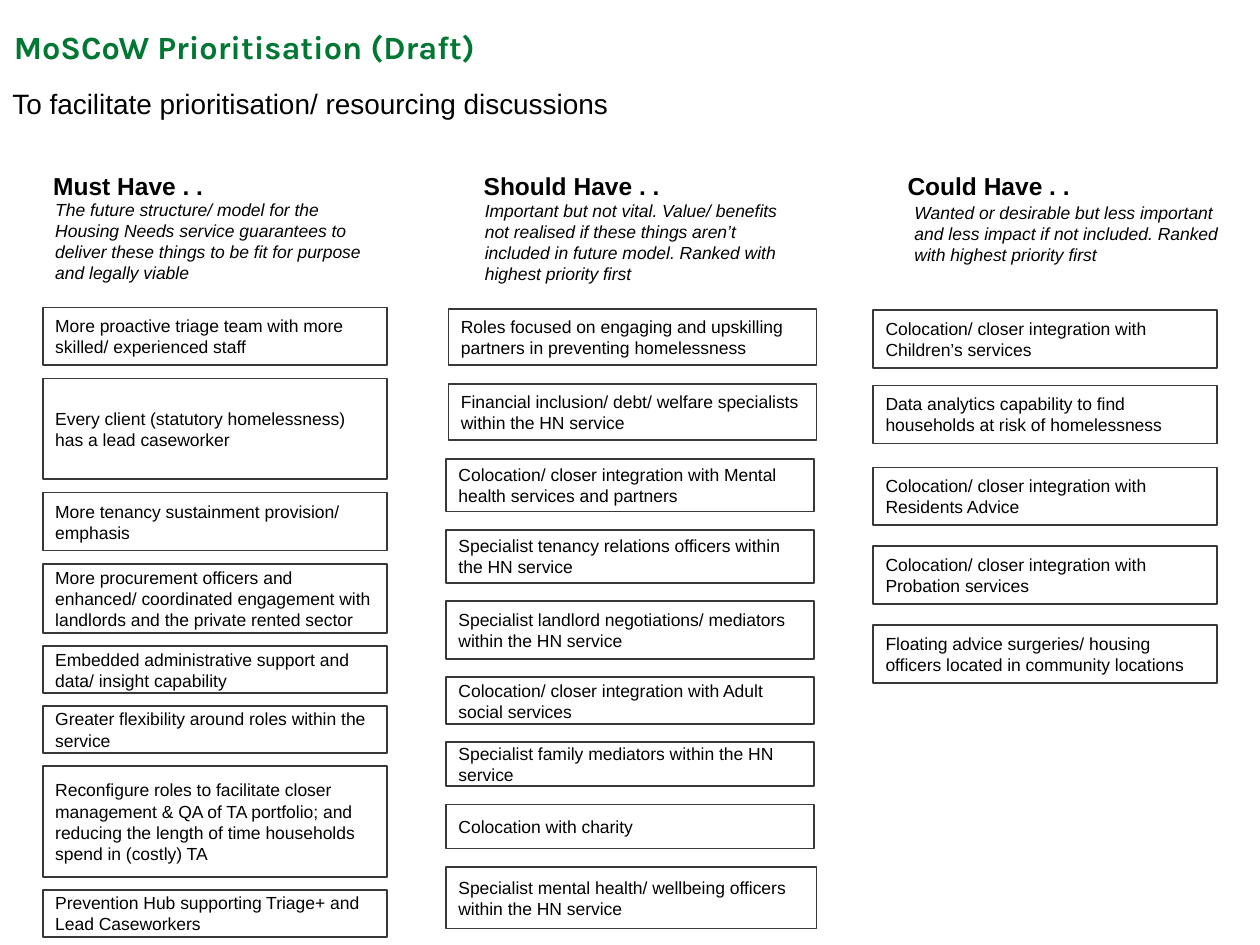
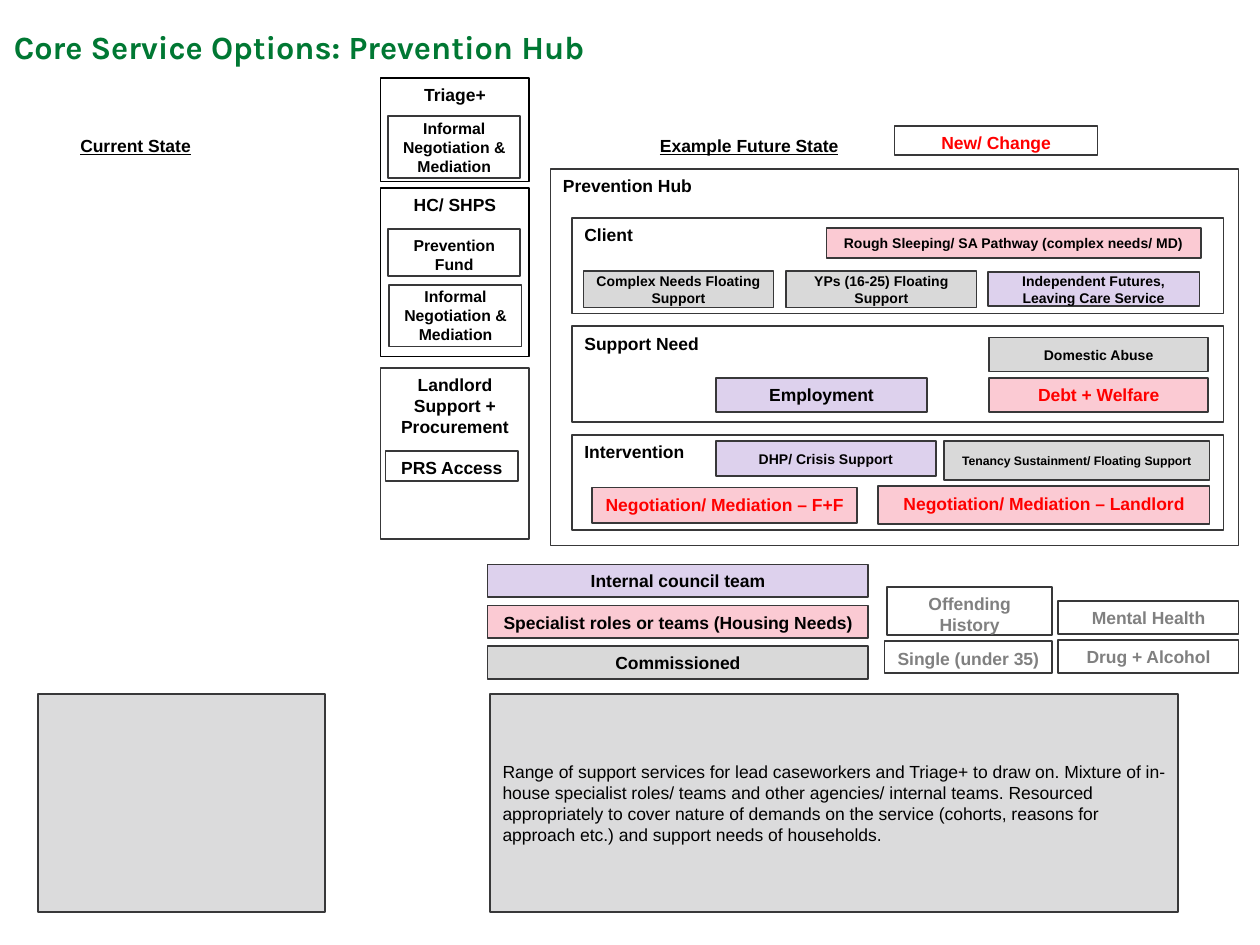
from pptx import Presentation
from pptx.dml.color import RGBColor
from pptx.enum.shapes import MSO_SHAPE as Shape
from pptx.enum.text import MSO_ANCHOR as Anchor, MSO_AUTO_SIZE as AutoSize, PP_ALIGN as Align
from pptx.util import Inches, Pt

BLACK, WHITE, RED, MUTED = "000000", "FFFFFF", "FF0000", "808080"
OUTLINE, TITLE_GREEN, NOTE_GREY = "383839", "007833", "DBDBDC"
COUNCIL, SPECIALIST, COMMISSIONED = "DDD1ED", "FBCAD3", "D9D9D9"

# ---- Slide 1: one entry per priority; boxes are (height, text, exceptions to the column rule)
SUBTITLE = "To facilitate prioritisation/ resourcing discussions"
PRIORITIES = [
    dict(
        heading=("Must Have . . ", 0.18),
        note=("The future structure/ model for the Housing Needs service guarantees to deliver "
              "these things to be fit for purpose and legally viable", 0.34, 1.61),
        left=0.34, top=2.44, width=2.73, gap=0.105,
        boxes=[
            (0.46, "More proactive triage team with more skilled/ experienced staff", {}),
            (0.8, "Every client (statutory homelessness) has a lead caseworker", {}),
            (0.46, "More tenancy sustainment provision/ emphasis", {}),
            (0.55, "More procurement officers and enhanced/ coordinated engagement with "
                   "landlords and the private rented sector", {}),
            (0.37, "Embedded administrative support and data/ insight capability", {}),
            (0.37, "Greater flexibility around roles within the service", {}),
            (0.88, "Reconfigure roles to facilitate closer management & QA of TA portfolio; and "
                   "reducing the length of time households spend in (costly) TA", {}),
            (0.37, "Prevention Hub supporting Triage+ and Lead Caseworkers", {}),
        ],
    ),
    dict(
        heading=("Should Have . . ", 3.7),
        note=("Important but not vital. Value/ benefits not realised if these things aren’t "
              "included in future model. Ranked with highest priority first", 3.75, 1.62),
        left=3.54, top=2.45, width=2.92, gap=0.145,
        boxes=[
            (0.45, "Roles focused on engaging and upskilling partners in preventing homelessness",
             dict(left=3.56)),
            (0.45, "Financial inclusion/ debt/ welfare specialists within the HN service",
             dict(left=3.56)),
            (0.42, "Colocation/ closer integration with Mental health services and partners", {}),
            (0.42, "Specialist tenancy relations officers within the HN service", {}),
            (0.46, "Specialist landlord negotiations/ mediators within the HN service", {}),
            (0.37, "Colocation/ closer integration with Adult social services", {}),
            (0.35, "Specialist family mediators within the HN service", {}),
            (0.35, "Colocation with charity", {}),
            (0.49, "Specialist mental health/ wellbeing officers within the HN service",
             dict(width=2.94)),
        ],
    ),
    dict(
        heading=("Could Have . . ", 7.01),
        note=("Wanted or desirable but less important and less impact if not included. Ranked "
              "with highest priority first", 7.16, 1.55),
        left=6.93, top=2.46, width=2.73, gap=0.165,
        boxes=[
            (0.46, "Colocation/ closer integration with Children’s services", {}),
            (0.46, "Data analytics capability to find households at risk of homelessness",
             dict(top=3.06)),
            (0.46, "Colocation/ closer integration with Residents Advice", dict(top=3.71)),
            (0.46, "Colocation/ closer integration with Probation services", {}),
            (0.46, "Floating advice surgeries/ housing officers located in community locations", {}),
        ],
    ),
]

# ---- Slide 2: places are (left, top, width, height)
STATES = [("Current State", 0.13), ("Example Future State", 5)]
HUB = ("Prevention Hub", (4.37, 1.34, 5.46, 2.99))
HUB_PANELS = ["Client", "Support Need", "Intervention"]
TEAMS = [  # text, top, height, format
    ("Triage+", 0.62, 0.82, dict(fill=None, line=BLACK)),
    ("HC/ SHPS", 1.49, 1.34, dict(fill=None, line=BLACK)),
    ("Landlord Support + Procurement", 2.92, 1.36, {}),
]
LEGEND = [
    ("Internal council team", COUNCIL, Anchor.MIDDLE),
    ("Specialist roles or teams (Housing Needs)", SPECIALIST, Anchor.TOP),
    ("Commissioned", COMMISSIONED, Anchor.MIDDLE),
]
MID = dict(anchor=Anchor.MIDDLE)
NEW = dict(color=RED)
SMALL = dict(size=8)
SERVICES = [  # text, place, fill, format
    ("Rough Sleeping/ SA Pathway (complex needs/ MD)", (6.56, 1.81, 2.97, 0.24), SPECIALIST, SMALL),
    ("Complex Needs Floating Support", (4.63, 2.15, 1.51, 0.29), COMMISSIONED, SMALL | MID),
    ("YPs (16-25) Floating Support", (6.24, 2.15, 1.51, 0.29), COMMISSIONED, SMALL | MID),
    ("Independent Futures, Leaving Care Service", (7.84, 2.16, 1.68, 0.27), COUNCIL, SMALL | MID),
    ("Domestic Abuse", (7.85, 2.68, 1.74, 0.27), COMMISSIONED, SMALL | MID),
    ("Employment", (5.68, 3, 1.68, 0.27), COUNCIL, MID),
    ("Debt + Welfare", (7.85, 3, 1.74, 0.27), SPECIALIST, NEW),
    ("DHP/ Crisis Support", (5.68, 3.5, 1.75, 0.28), COUNCIL, SMALL | MID),
    ("Tenancy Sustainment/ Floating Support", (7.49, 3.5, 2.11, 0.31), COMMISSIONED,
     dict(size=7) | MID),
    ("Negotiation/ Mediation – F+F", (4.7, 3.87, 2.1, 0.28), SPECIALIST, NEW),
    ("Negotiation/ Mediation – Landlord", (6.97, 3.86, 2.63, 0.3), SPECIALIST, NEW),
    ("New/ Change", (7.1, 1, 1.61, 0.23), WHITE, NEW),
    ("Informal Negotiation & Mediation", (3.08, 0.92, 1.05, 0.49), WHITE, dict(size=9) | MID),
    ("Prevention Fund", (3.08, 1.82, 1.05, 0.37), WHITE, dict(size=9)),
    ("Informal Negotiation & Mediation", (3.09, 2.26, 1.05, 0.49), WHITE, dict(size=9) | MID),
    ("PRS Access", (3.06, 3.58, 1.05, 0.24), WHITE, {}),
]
UNPLACED_NEEDS = [
    ("Offending History", (7.04, 4.66, 1.31, 0.38)),
    ("Mental Health", (8.4, 4.77, 1.43, 0.26)),
    ("Single (under 35)", (7.02, 5.09, 1.33, 0.25)),
    ("Drug + Alcohol", (8.4, 5.08, 1.43, 0.26)),
]
SUMMARIES = [
    ("", (0.3, 5.51, 2.28, 1.73)),
    ("Range of support services for lead caseworkers and Triage+ to draw on. Mixture of in-house "
     "specialist roles/ teams and other agencies/ internal teams. Resourced appropriately to cover "
     "nature of demands on the service (cohorts, reasons for approach etc.) and support needs of "
     "households.", (3.89, 5.51, 5.46, 1.73)),
]


def rgb(code):
    return RGBColor.from_string(code)


def write(box, text, size=10, color=BLACK, font="Arial", bold=False, italic=False,
          underline=False, align=Align.LEFT, anchor=Anchor.TOP, spacing=None):
    frame = box.text_frame
    frame.word_wrap = True
    frame.vertical_anchor = anchor
    if not text:
        return
    para = frame.paragraphs[0]
    para.alignment = align
    para.line_spacing = spacing
    span = para.add_run()
    span.text = text
    span.font.name, span.font.size = font, Pt(size)
    span.font.bold, span.font.italic, span.font.underline = bold, italic, underline
    span.font.color.rgb = rgb(color)


def add_label(page, text, place, **style):
    box = page.shapes.add_textbox(*map(Inches, place))
    write(box, text, **style)
    return box


def add_box(page, text, place, fill=WHITE, line=OUTLINE, **style):
    box = page.shapes.add_shape(Shape.RECTANGLE, *map(Inches, place))
    box.shadow.inherit = False
    if fill:
        box.fill.solid()
        box.fill.fore_color.rgb = rgb(fill)
    else:
        box.fill.background()
    box.line.color.rgb = rgb(line)
    box.line.width = Pt(1)
    write(box, text, **style)


def add_page(deck, title):
    page = deck.slides.add_slide(deck.slide_layouts[6])
    box = add_label(page, title, (0.11, 0.24, 7.05, 0.3), size=18.5, color=TITLE_GREEN,
                    font="Karla", bold=True, spacing=0.95)
    frame = box.text_frame
    frame.margin_left = frame.margin_right = frame.margin_top = frame.margin_bottom = 0
    frame.auto_size = AutoSize.SHAPE_TO_FIT_TEXT
    return page


def build_priorities(deck):
    page = add_page(deck, "MoSCoW Prioritisation (Draft)")
    add_label(page, SUBTITLE, (0, 0.64, 9.6, 0.37), size=16)
    for column in PRIORITIES:
        heading, heading_left = column["heading"]
        add_label(page, heading, (heading_left, 1.29, 1.73, 0.36), size=14, bold=True,
                  align=Align.CENTER, **MID)
        note, note_left, note_top = column["note"]
        add_label(page, note, (note_left, note_top, 2.73, 0.6), italic=True, **MID)
        top = column["top"]
        for height, text, exceptions in column["boxes"]:
            top = exceptions.get("top", top)
            left = exceptions.get("left", column["left"])
            width = exceptions.get("width", column["width"])
            add_box(page, text, (left, top, width, height), **MID)
            top += height + column["gap"]


def build_prevention_hub(deck):
    page = add_page(deck, "Core Service Options: Prevention Hub")
    centred = dict(bold=True, align=Align.CENTER)
    for text, left in STATES:
        add_label(page, text, (left, 1.02, 1.89, 0.58), underline=True, **centred)
    add_box(page, *HUB, bold=True)
    for row, text in enumerate(HUB_PANELS):
        add_box(page, text, (4.54, 1.73 + 0.86 * row, 5.17, 0.76), bold=True)
    for text, top, height, style in TEAMS:
        add_box(page, text, (3.02, top, 1.18, height), **centred, **style)
    for text, place, fill, style in SERVICES:
        add_box(page, text, place, fill, **centred, **style)
    for row, (text, fill, anchor) in enumerate(LEGEND):
        add_box(page, text, (3.87, 4.48 + 0.325 * row, 3.02, 0.26), fill, anchor=anchor, **centred)
    for text, place in UNPLACED_NEEDS:
        add_box(page, text, place, color=MUTED, **centred)
    for text, place in SUMMARIES:
        add_box(page, text, place, NOTE_GREY, **MID)


def main():
    deck = Presentation()
    deck.slide_width, deck.slide_height = Inches(10), Inches(7.5)
    build_priorities(deck)
    build_prevention_hub(deck)
    deck.save("out.pptx")


if __name__ == "__main__":
    main()
